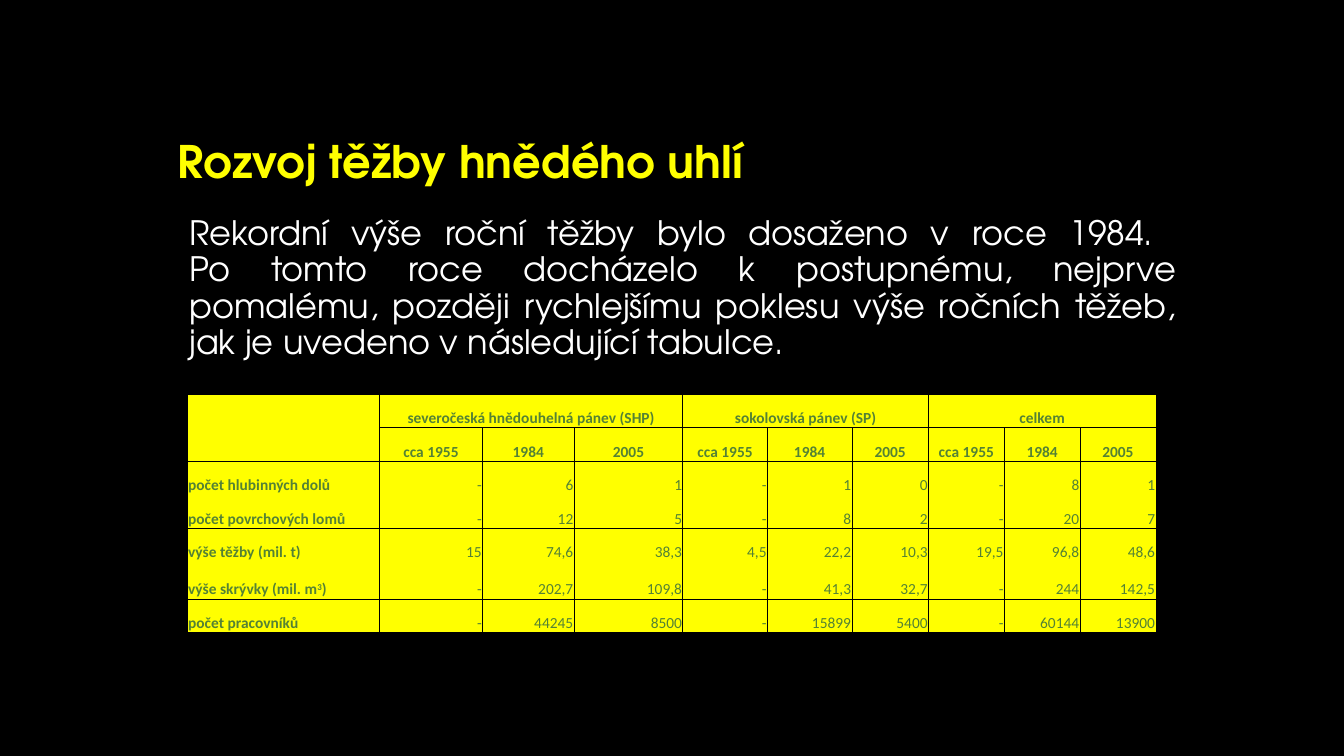
from lxml.etree import SubElement
from pptx import Presentation
from pptx.dml.color import RGBColor
from pptx.enum.text import MSO_ANCHOR, PP_ALIGN
from pptx.oxml.ns import qn
from pptx.util import Cm, Pt

HUES = {"back": "000000", "gold": "FFFF00", "text": "FFFFFF", "leaf": "548235"}
HEAD = "TeX Gyre Adventor"
CELL = "Calibri"

WIDTHS = [4.85, 2.59, 2.31, 2.74, 2.13, 2.13, 1.93, 1.91, 1.91, 1.91]
HEIGHTS = [0.84, 0.86, 0.84, 0.84, 0.84, 0.94, 0.86]
GROUPS = ["severočeská hnědouhelná pánev (SHP)", "sokolovská pánev (SP)", "celkem"]
YEARS = ["cca 1955", "1984", "2005"]
ROWS = [
    ["počet hlubinných dolů", "-", "6", "1", "-", "1", "0", "-", "8", "1"],
    ["počet povrchových lomů", "-", "12", "5", "-", "8", "2", "-", "20", "7"],
    ["výše těžby (mil. t)", "15", "74,6", "38,3", "4,5", "22,2", "10,3",
     "19,5", "96,8", "48,6"],
    ["výše skrývky (mil. m^3^)", "-", "202,7", "109,8", "-", "41,3", "32,7",
     "-", "244", "142,5"],
    ["počet pracovníků", "-", "44245", "8500", "-", "15899", "5400",
     "-", "60144", "13900"],
]
BODY = [
    "Rekordní výše roční těžby bylo dosaženo v roce 1984. ",
    "Po tomto roce docházelo k postupnému, nejprve pomalému, později "
    "rychlejšímu poklesu výše ročních těžeb, jak je uvedeno v následující tabulce.",
]
RULES = [1, 0.5, 1, 0, 0.5, 0, 0.5, 1]
BLOCKS = (0, 1, 4, 7, 10)


def upright(row, col):
    if col in BLOCKS[:-1]:
        return 1
    return 0.5 if row else 0


def level(row, col):
    return 0 if (row, col) == (1, 0) else RULES[row]


class Deck:
    def __init__(self):
        self.file = Presentation()
        self.file.slide_width = Cm(33.87)
        self.file.slide_height = Cm(19.05)
        self.slide = self.file.slides.add_slide(self.file.slide_layouts[5])
        fill = self.slide.background.fill
        fill.solid()
        fill.fore_color.rgb = self.hue("back")

    def hue(self, name):
        return RGBColor.from_string(HUES[name])

    def run(self, para, text, face, size, hue, bold=False):
        run = para.add_run()
        run.text = text
        run.font.name = face
        run.font.size = Pt(size)
        run.font.bold = bold
        run.font.color.rgb = self.hue(hue)
        return run

    def title(self, text, box):
        shape = self.slide.shapes.title
        shape.left, shape.top, shape.width, shape.height = map(Cm, box)
        frame = shape.text_frame
        frame.vertical_anchor = MSO_ANCHOR.BOTTOM
        para = frame.paragraphs[0]
        para.alignment = PP_ALIGN.LEFT
        para.line_spacing = 0.9
        self.run(para, text, HEAD, 32, "gold", True)

    def body(self, lines, box):
        frame = self.slide.shapes.add_textbox(*map(Cm, box)).text_frame
        frame.word_wrap = True
        para = frame.paragraphs[0]
        para.alignment = PP_ALIGN.JUSTIFY
        para.line_spacing = 0.9
        for i, line in enumerate(lines):
            if i:
                para.add_line_break()
            self.run(para, line, HEAD, 24, "text")

    def edge(self, cell, side, width):
        line = SubElement(cell._tc.get_or_add_tcPr(), qn("a:ln" + side))
        line.set("w", str(Pt(width)))
        if width:
            fill = SubElement(line, qn("a:solidFill"))
            SubElement(fill, qn("a:srgbClr")).set("val", HUES["back"])
        else:
            SubElement(line, qn("a:noFill"))

    def label(self, cell, text, align, bold):
        para = cell.text_frame.paragraphs[0]
        para.alignment = align
        for i, part in enumerate(text.split("^")):
            run = self.run(para, part, CELL, 11, "leaf", bold)
            if i % 2:
                run._r.get_or_add_rPr().set("baseline", "30000")

    def table(self, left, top):
        size = len(HEIGHTS), len(WIDTHS)
        grid = self.slide.shapes.add_table(
            *size, Cm(left), Cm(top), Cm(sum(WIDTHS)), Cm(sum(HEIGHTS))).table
        grid.first_row = grid.horz_banding = False
        for col, width in zip(grid.columns, WIDTHS):
            col.width = Cm(width)
        for row, height in zip(grid.rows, HEIGHTS):
            row.height = Cm(height)
        for r in range(size[0]):
            for c in range(size[1]):
                cell = grid.cell(r, c)
                cell.margin_left = cell.margin_right = cell.margin_top = Cm(0.02)
                cell.margin_bottom = 0
                cell.vertical_anchor = MSO_ANCHOR.BOTTOM
                self.edge(cell, "L", upright(r, c))
                self.edge(cell, "R", upright(r, c + 1))
                self.edge(cell, "T", level(r, c))
                self.edge(cell, "B", level(r + 1, c))
                cell.fill.solid()
                cell.fill.fore_color.rgb = self.hue("gold")
        for col, name in zip(BLOCKS[1:], GROUPS):
            grid.cell(0, col).merge(grid.cell(0, col + 2))
            self.label(grid.cell(0, col), name, PP_ALIGN.CENTER, True)
            for i, year in enumerate(YEARS):
                self.label(grid.cell(1, col + i), year, PP_ALIGN.CENTER, True)
        for r, row in enumerate(ROWS, 2):
            for c, text in enumerate(row):
                align = PP_ALIGN.RIGHT if c else PP_ALIGN.LEFT
                self.label(grid.cell(r, c), text, align, c == 0)


def main():
    deck = Deck()
    deck.title("Rozvoj těžby hnědého uhlí", (4.22, 1.07, 25.4, 3.81))
    deck.body(BODY, (4.52, 5.33, 25.37, 11.43))
    deck.table(4.72, 9.93)
    deck.file.save("out.pptx")


if __name__ == "__main__":
    main()
